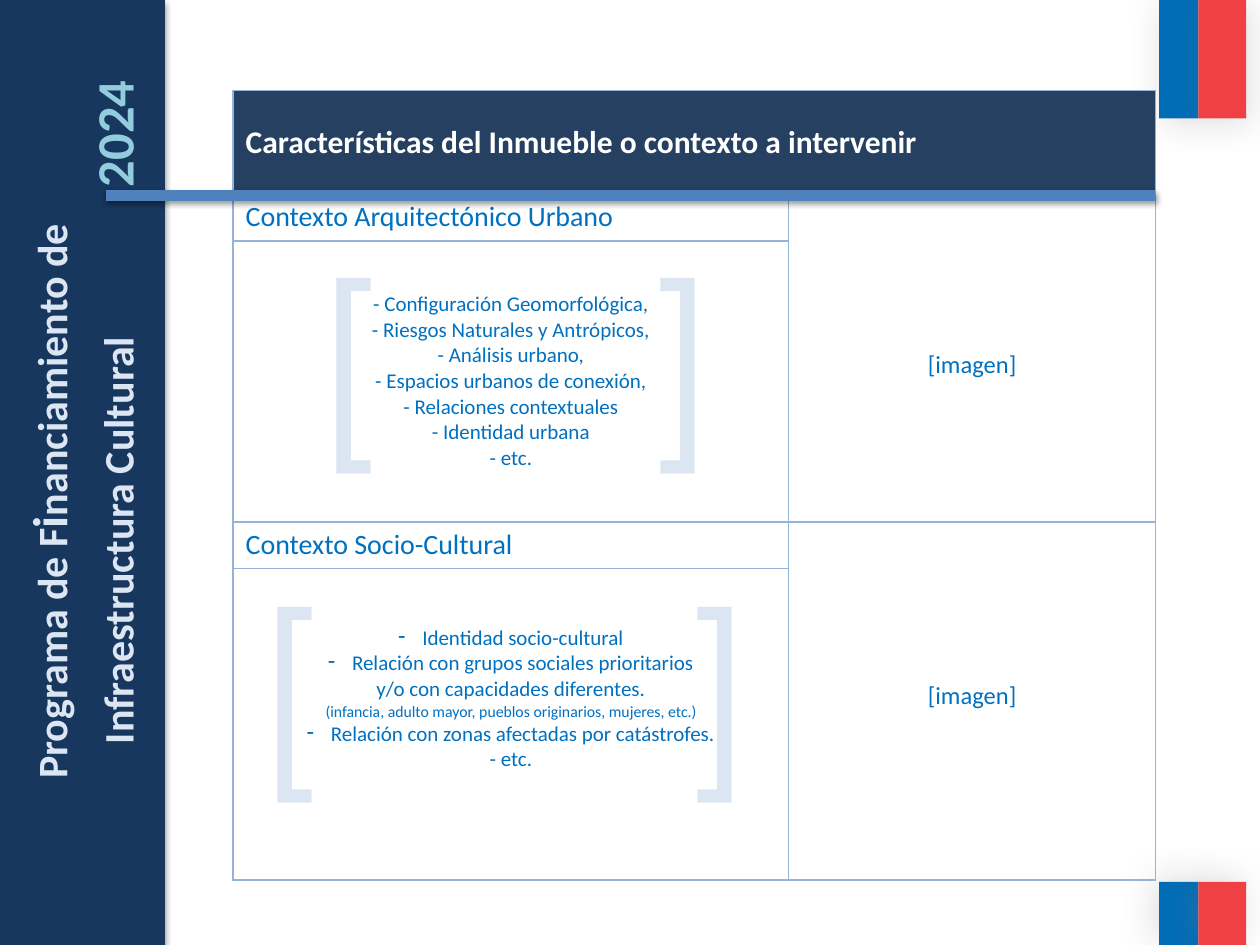
from dataclasses import dataclass

from lxml.etree import SubElement
from pptx import Presentation
from pptx.dml.color import RGBColor
from pptx.enum.shapes import MSO_CONNECTOR, MSO_SHAPE
from pptx.enum.text import MSO_ANCHOR, MSO_AUTO_SIZE, PP_ALIGN
from pptx.oxml.ns import qn
from pptx.util import Inches, Pt


@dataclass(frozen=True)
class Theme:
    """Fonts, colours and type sizes of the slide."""
    font: str = "Calibri"
    bracket_font: str = "Arial Narrow"
    navy: str = "17375E"
    header: str = "254061"
    pale: str = "DCE6F2"
    year: str = "93CDDD"
    text: str = "0070C0"
    white: str = "FFFFFF"
    border: str = "95B3D7"
    rule: str = "4F81BD"
    flag_blue: str = "006CB7"
    flag_red: str = "EF4144"
    bracket_size: int = 120
    year_size: int = 30
    accent_size: int = 28
    title_size: int = 24
    header_size: int = 18
    section_size: int = 16
    image_size: int = 14
    body_size: int = 12
    note_size: int = 9


T = Theme()
URBAN = [
    "- Configuración Geomorfológica,",
    "- Riesgos Naturales y Antrópicos,",
    "- Análisis urbano,",
    "- Espacios urbanos de conexión,",
    "- Relaciones contextuales",
    "- Identidad urbana",
    "- etc.",
]
SOCIAL = [
    "Identidad socio-cultural",
    "Relación con grupos sociales prioritarios",
    "y/o con capacidades diferentes.",
    "(infancia, adulto mayor, pueblos originarios, mujeres, etc.)",
    "Relación con zonas afectadas por catástrofes.",
    "- etc.",
]
SOCIAL_BULLETS = (0, 1, 4)
SOCIAL_NOTE = 3


def rgb(value):
    """Return a colour from its hex string."""
    return RGBColor.from_string(value)


def style(r, size, color, font=T.font, bold=False):
    """Format one run."""
    r.font.size, r.font.name, r.font.bold = Pt(size), font, bold
    r.font.color.rgb = rgb(color)


def add_shadow(sp, color, alpha, blur, dist, angle):
    """Give a shape or connector an outer shadow."""
    props = sp.element.spPr
    effects = props.find(qn("a:effectLst"))
    if effects is None:
        effects = SubElement(props, qn("a:effectLst"))
    outer = SubElement(effects, qn("a:outerShdw"), blurRad=str(Pt(blur)),
                       dist=str(Pt(dist)), dir=str(angle * 60000), rotWithShape="0")
    clr = SubElement(outer, qn("a:srgbClr"), val=color)
    SubElement(clr, qn("a:alpha"), val=str(alpha * 1000))


def add_bar(s, box, color, shadow):
    """Add a plain filled rectangle with a shadow."""
    sp = s.shapes.add_shape(MSO_SHAPE.RECTANGLE, *map(Inches, box))
    sp.fill.solid()
    sp.fill.fore_color.rgb = rgb(color)
    sp.line.fill.background()
    sp.shadow.inherit = False
    add_shadow(sp, *shadow)


def add_tab(p, position):
    """Add a left tab stop to a paragraph."""
    tabs = SubElement(p._p.get_or_add_pPr(), qn("a:tabLst"))
    SubElement(tabs, qn("a:tab"), pos=str(Inches(position)), algn="l")


def add_flag(s, box, angle):
    """Draw the two-colour flag inside the box."""
    left, top, width, height = box
    split = width * 0.45
    shadow = ("808080", 25, 20, 3, angle)
    add_bar(s, (left, top, split, height), T.flag_blue, shadow)
    add_bar(s, (left + split, top, width - split, height), T.flag_red, shadow)


def add_brackets(s, box, gap):
    """Place a pair of large brackets, the second at the given offset."""
    tf = s.shapes.add_textbox(*map(Inches, box)).text_frame
    tf.word_wrap = True
    p = tf.paragraphs[0]
    add_tab(p, gap)
    p.text = "[\t]"
    for r in p.runs:
        style(r, T.bracket_size, T.pale, T.bracket_font)


def place_vertical(sp, center, length, depth):
    """Turn a text shape to read upwards, centred on a point."""
    x, y = center
    sp.left, sp.top = Inches(x - length / 2), Inches(y - depth / 2)
    sp.width, sp.height = Inches(length), Inches(depth)
    sp.rotation = 270
    tf = sp.text_frame
    tf.word_wrap = True
    tf.auto_size = MSO_AUTO_SIZE.NONE
    tf.vertical_anchor = MSO_ANCHOR.TOP


def add_runs(p, parts):
    """Add bold runs given as text, size and colour."""
    for text, size, color in parts:
        r = p.add_run()
        r.text = text
        style(r, size, color, bold=True)


def add_sidebar(s, box):
    """Draw the side panel with the vertical title and year."""
    left, top, width, height = box
    add_bar(s, box, T.navy, ("000000", 35, 3.1, 1.8, 90))
    middle = top + height / 2 + 0.23
    title = s.shapes.title
    title.element.getparent().append(title.element)
    place_vertical(title, (left + 0.38, middle), 7.04, 0.57)
    p = title.text_frame.paragraphs[0]
    p.alignment = PP_ALIGN.CENTER
    add_runs(p, [("Programa de F", T.title_size, T.pale),
                 ("i", T.accent_size, T.pale),
                 ("nanciamiento de", T.title_size, T.pale)])
    sub = s.shapes.add_textbox(0, 0, 0, 0)
    place_vertical(sub, (left + 0.9, middle), 7.03, 0.61)
    sub.text_frame.margin_left = Inches(1.59)
    p = sub.text_frame.paragraphs[0]
    add_tab(p, 4.42)
    add_runs(p, [("Infraestructura Cultural\t", T.title_size, T.pale),
                 ("2024", T.year_size, T.year)])


def format_cell(cell, fill=None):
    """Set the borders and fill of one cell."""
    tc_pr = cell._tc.get_or_add_tcPr()
    for side in ("lnL", "lnR", "lnT", "lnB"):
        ln = SubElement(tc_pr, qn(f"a:{side}"), w=str(Pt(1)))
        solid = SubElement(ln, qn("a:solidFill"))
        SubElement(solid, qn("a:srgbClr"), val=T.border)
    if fill:
        cell.fill.solid()
        cell.fill.fore_color.rgb = rgb(fill)
    else:
        cell.fill.background()


def fill_cell(cell, lines, size, color=T.text, bold=False,
              align=PP_ALIGN.LEFT, anchor=MSO_ANCHOR.MIDDLE):
    """Write lines into a cell and format them."""
    cell.text_frame.text = "\n".join(lines)
    cell.vertical_anchor = anchor
    for p in cell.text_frame.paragraphs:
        p.alignment = align
        for r in p.runs:
            style(r, size, color, bold=bold)


def add_dash(p):
    """Give a paragraph a hanging dash bullet."""
    p_pr = p._p.get_or_add_pPr()
    p_pr.set("marL", str(Inches(0.19)))
    p_pr.set("indent", str(-Inches(0.19)))
    SubElement(p_pr, qn("a:buChar"), char="-")


def add_context_table(s, box):
    """Build the table of contexts with its image cells."""
    table = s.shapes.add_table(5, 2, *map(Inches, box)).table
    table.first_row = table.horz_banding = False
    for col, width in zip(table.columns, (4.41, 2.91)):
        col.width = Inches(width)
    for row, height in zip(table.rows, (0.82, 0.37, 2.23, 0.37, 2.47)):
        row.height = Inches(height)
    for i, row in enumerate(table.rows):
        for cell in row.cells:
            format_cell(cell, T.header if i == 0 else None)
    table.cell(0, 0).merge(table.cell(0, 1))
    fill_cell(table.cell(0, 0), ["Características del Inmueble o contexto a intervenir"],
              T.header_size, T.white, bold=True)
    sections = [(1, "Contexto Arquitectónico Urbano", URBAN),
                (3, "Contexto Socio-Cultural", SOCIAL)]
    for i, heading, lines in sections:
        table.cell(i, 1).merge(table.cell(i + 1, 1))
        fill_cell(table.cell(i, 0), [heading], T.section_size, anchor=MSO_ANCHOR.TOP)
        fill_cell(table.cell(i, 1), ["[imagen]"], T.image_size, align=PP_ALIGN.CENTER)
        fill_cell(table.cell(i + 1, 0), lines, T.body_size, align=PP_ALIGN.CENTER)
    table.cell(1, 1).margin_top = Inches(0.17)
    table.cell(3, 1).margin_bottom = Inches(0.12)
    social = table.cell(4, 0)
    social.vertical_anchor = MSO_ANCHOR.TOP
    social.margin_top = Inches(0.45)
    paragraphs = social.text_frame.paragraphs
    for i in SOCIAL_BULLETS:
        add_dash(paragraphs[i])
    paragraphs[SOCIAL_NOTE].runs[0].font.size = Pt(T.note_size)


def add_rule(s, left, right, y):
    """Draw the thick line under the table header."""
    line = s.shapes.add_connector(MSO_CONNECTOR.STRAIGHT, Inches(right), Inches(y),
                                  Inches(left), Inches(y))
    line.line.color.rgb = rgb(T.rule)
    line.line.width = Pt(6)
    add_shadow(line, "000000", 38, 3.1, 1.6, 90)


def main():
    """Build and save the slide."""
    prs = Presentation()
    prs.slide_width, prs.slide_height = Inches(10), Inches(7.5)
    s = prs.slides.add_slide(prs.slide_layouts[5])
    add_flag(s, (9.2, 0, 0.69, 0.94), 45)
    add_flag(s, (9.2, 7, 0.69, 0.5), 215)
    add_brackets(s, (2.01, 4.31, 4.17, 2.12), 3.42)
    add_brackets(s, (2.48, 1.7, 3.46, 2.12), 2.66)
    add_sidebar(s, (0, 0, 1.31, 7.5))
    add_context_table(s, (1.85, 0.72, 7.32, 6.26))
    add_rule(s, 0.84, 9.17, 1.55)
    prs.save("out.pptx")


if __name__ == "__main__":
    main()
